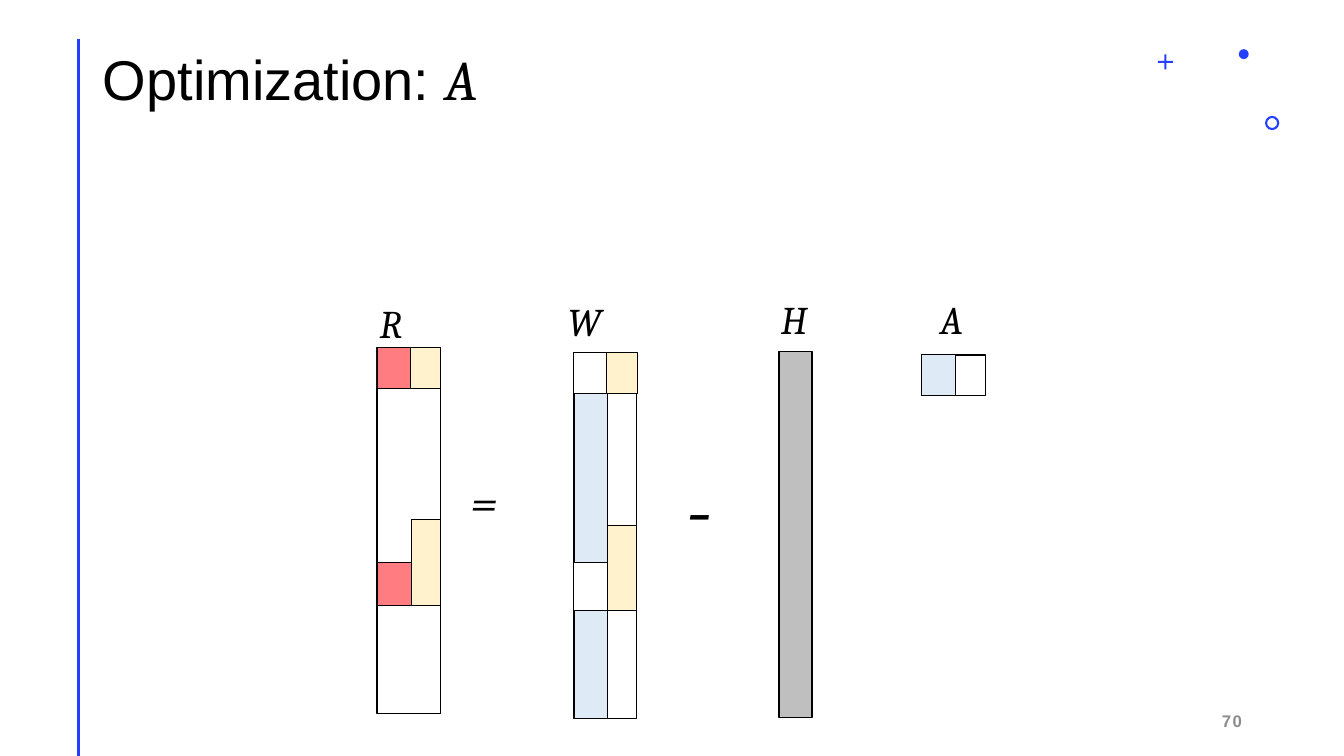
from dataclasses import dataclass

from pptx import Presentation
from pptx.dml.color import RGBColor
from pptx.enum.shapes import MSO_CONNECTOR, MSO_SHAPE
from pptx.enum.text import MSO_ANCHOR, PP_ALIGN
from pptx.oxml.ns import qn
from pptx.util import Cm, Pt
from lxml import etree

RECT, OVAL = MSO_SHAPE.RECTANGLE, MSO_SHAPE.OVAL
CROSS, RING = MSO_SHAPE.CROSS, MSO_SHAPE.DONUT
MIDDLE, TOP = MSO_ANCHOR.MIDDLE, MSO_ANCHOR.TOP
LEFT, RIGHT = PP_ALIGN.LEFT, PP_ALIGN.RIGHT
STRAIGHT = MSO_CONNECTOR.STRAIGHT
TITLE_ONLY = 5


@dataclass(frozen=True)
class Theme:
    ink: str = "000000"
    white: str = "FFFFFF"
    accent: str = "243FFF"
    muted: str = "8C8C8C"
    red: str = "FF7C80"
    cream: str = "FFF2CC"
    pale: str = "DEEBF7"
    gray: str = "BFBFBF"
    sans: str = "Arial"
    math: str = "Cambria"
    head: int = 40
    label: int = 28
    equal: int = 36
    minus: int = 60
    page: int = 12


THEME = Theme()
MATH = {"name": THEME.math, "italic": True}

# Size of a two-column matrix and of its parts, in cm
WIDE, TALL, SIDE, ROW = 1.6, 9.22, 0.84, 1.02


def rgb(code):
    return RGBColor.from_string(code)


def style(target, values):
    for name, value in values.items():
        setattr(target, name, value)


def add_run(para, text, size, color, font):
    run = para.add_run()
    run.text = text
    style(run.font, {"size": Pt(size), **font})
    run.font.color.rgb = rgb(color)
    return run


def add_text(slide, box, text, size, font, color=THEME.ink,
             anchor=TOP, align=LEFT):
    frame = slide.shapes.add_textbox(*map(Cm, box)).text_frame
    style(frame, {"word_wrap": True, "vertical_anchor": anchor})
    para = frame.paragraphs[0]
    para.alignment = align
    return add_run(para, text, size, color, font)


def add_form(shapes, kind, box, fill, line=None):
    form = shapes.add_shape(kind, *map(Cm, box))
    form.shadow.inherit = False
    form.fill.solid()
    form.fill.fore_color.rgb = rgb(fill)
    if line is None:
        form.line.fill.background()
    else:
        form.line.color.rgb = rgb(THEME.ink)
        form.line.width = Pt(line)
    return form


def add_block(slide, left, top, size, cells, fill=THEME.white):
    """Draw a framed matrix; its cells are placed from its top left corner."""
    shapes = slide.shapes.add_group_shape().shapes if cells else slide.shapes
    add_form(shapes, RECT, (left, top, *size), fill, 1)
    for x, y, wide, tall, tint in cells:
        add_form(shapes, RECT, (left + x, top + y, wide, tall), tint, 0.5)


def add_decor(slide):
    rule = slide.shapes.add_connector(
        STRAIGHT, Cm(1.98), Cm(0.98), Cm(1.98), Cm(19.05))
    rule.line.color.rgb = rgb(THEME.accent)
    rule.line.width = Pt(2)
    etree.SubElement(rule._element.spPr, qn("a:effectLst"))
    for kind, left, top, size, adjust in (
            (CROSS, 29.18, 1.37, 0.38, 0.43),
            (RING, 31.88, 2.92, 0.36, 0.15),
            (OVAL, 31.22, 1.24, 0.25, None)):
        mark = add_form(slide.shapes, kind, (left, top, size, size),
                        THEME.accent)
        if adjust:
            mark.adjustments[0] = adjust


def add_title(slide):
    title = slide.shapes.title
    style(title, dict(zip(("left", "top", "width", "height"),
                          map(Cm, (2.34, 0.23, 29.21, 3.68)))))
    title.text_frame.vertical_anchor = MIDDLE
    para = title.text_frame.paragraphs[0]
    style(para, {"alignment": LEFT, "line_spacing": 0.9})
    add_run(para, "Optimization: ", THEME.head, THEME.ink,
            {"name": THEME.sans})
    add_run(para, "A", THEME.head, THEME.ink, MATH)


def main():
    deck = Presentation()
    style(deck, {"slide_width": Cm(33.87), "slide_height": Cm(19.05)})
    slide = deck.slides.add_slide(deck.slide_layouts[TITLE_ONLY])
    add_decor(slide)
    add_title(slide)

    # Matrices: R and W share the cells of their right column
    right = [(0.86, 4.34, 0.74, 2.16, THEME.cream),
             (0.82, 0, 0.79, ROW, THEME.cream)]
    reds = [(0.02, 5.41, SIDE, 1.09, THEME.red),
            (0, 0, SIDE, ROW, THEME.red)]
    blues = [(0.02, 6.5, SIDE, 2.72, THEME.pale),
             (0.02, ROW, SIDE, 4.27, THEME.pale)]
    add_block(slide, 9.5, 8.76, (WIDE, TALL), right + reds)
    add_block(slide, 14.45, 8.89, (WIDE, TALL), right + blues)
    add_block(slide, 19.63, 8.86, (SIDE, TALL), [], THEME.gray)
    add_block(slide, 23.23, 8.95, (WIDE, ROW),
              [(0, -0.03, SIDE, 1.04, THEME.pale)])

    # Names and signs
    for text, left, top, wide, tall, size in (
            ("R", 9.32, 7.42, 1.19, 1.45, THEME.label),
            ("W", 14.07, 7.37, 3.96, 1.45, THEME.label),
            ("H", 19.43, 7.32, 1.6, 1.45, THEME.label),
            ("A", 23.44, 7.32, 3.96, 1.45, THEME.label),
            ("=", 11.61, 11.71, 3.23, 1.8, THEME.equal),
            ("-", 17.04, 11.35, 1.6, 2.82, THEME.minus)):
        add_text(slide, (left, top, wide, tall), text, size, MATH)

    # Page number, with letters set 1 pt apart
    page = add_text(slide, (23.93, 17.65, 7.62, 1.02), "70", THEME.page,
                    {"name": THEME.sans, "bold": True}, THEME.muted,
                    MIDDLE, RIGHT)
    page.font._element.set("spc", "100")

    deck.save("out.pptx")


if __name__ == "__main__":
    main()
